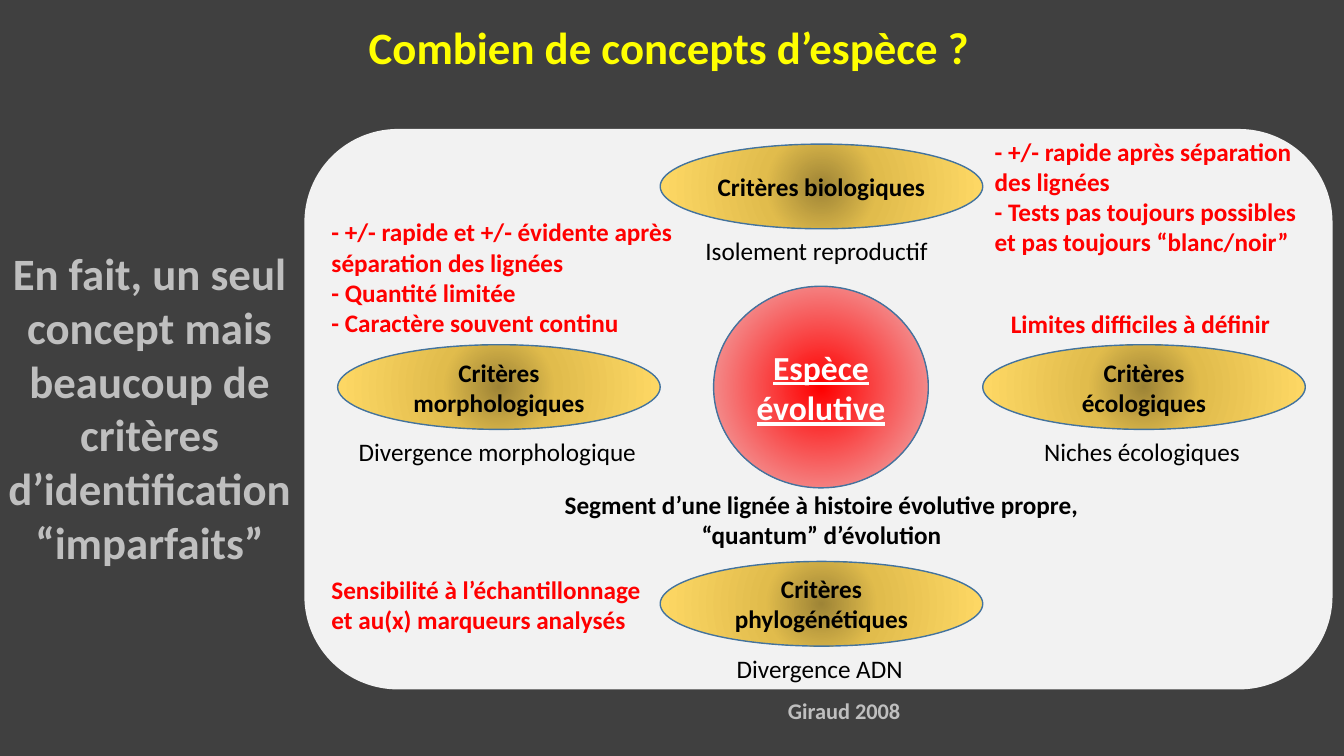
import pptx
import pptx.util
import pptx.dml.color
import pptx.enum.shapes
import pptx.enum.text
import pptx.oxml
import pptx.oxml.ns

Pt = pptx.util.Pt
RGB = pptx.dml.color.RGBColor
SHAPES = pptx.enum.shapes.MSO_SHAPE
ALIGN = pptx.enum.text.PP_ALIGN
FIT = pptx.enum.text.MSO_AUTO_SIZE
MIDDLE = pptx.enum.text.MSO_ANCHOR.MIDDLE

DARK = RGB(0x40, 0x40, 0x40)
PALE = RGB(0xF2, 0xF2, 0xF2)
GREY = RGB(0xBF, 0xBF, 0xBF)
YELLOW = RGB(0xFF, 0xFF, 0x00)
RED = RGB(0xFF, 0x00, 0x00)
BLACK = RGB(0x00, 0x00, 0x00)
WHITE = RGB(0xFF, 0xFF, 0xFF)
BLUE = RGB(0x43, 0x73, 0x9E)
GOLD_STOPS = [(0, RGB(0x9E, 0x84, 0x36)), (34, RGB(0xE1, 0xBC, 0x4C)),
              (100, RGB(0xFF, 0xD9, 0x66))]
RED_STOPS = [(0, RED), (100, RGB(0xEF, 0xBC, 0xBC)), (100, RGB(0xF7, 0xDE, 0xDE))]


def write(frame, lines, size, color, bold=False, align=ALIGN.LEFT):
    """Fill a text frame with one paragraph per line."""
    frame.text = "\n".join(lines)
    for para in frame.paragraphs:
        para.alignment = align
        for run in para.runs:
            font = run.font
            font.name, font.size, font.bold = "Calibri", Pt(size), bold
            font.color.rgb = color


def add_label(slide, box, lines, size, color, bold=False, align=ALIGN.LEFT, wrap=True):
    """Add a text box at a box given in points."""
    frame = slide.shapes.add_textbox(*map(Pt, box)).text_frame
    frame.word_wrap = wrap
    frame.auto_size = FIT.SHAPE_TO_FIT_TEXT
    write(frame, lines, size, color, bold, align)
    return frame


def add_oval(slide, box, lines, stops, size, color):
    """Add an outlined ellipse with a radial gradient and centred text."""
    oval = slide.shapes.add_shape(SHAPES.OVAL, *map(Pt, box))
    oval.shadow.inherit = False
    oval.fill.background()
    marks = "".join(f'<a:gs pos="{pos * 1000}"><a:srgbClr val="{tint}"/></a:gs>'
                    for pos, tint in stops)
    grad = pptx.oxml.parse_xml(
        f'<a:gradFill {pptx.oxml.ns.nsdecls("a")} rotWithShape="1">'
        f'<a:gsLst>{marks}</a:gsLst><a:path path="circle">'
        '<a:fillToRect l="50000" t="50000" r="50000" b="50000"/>'
        '</a:path></a:gradFill>')
    blank = oval.element.spPr.find(pptx.oxml.ns.qn("a:noFill"))
    oval.element.spPr.replace(blank, grad)
    oval.line.color.rgb = BLUE
    oval.line.width = Pt(1)
    oval.text_frame.word_wrap = True
    oval.text_frame.vertical_anchor = MIDDLE
    write(oval.text_frame, lines, size, color, True, ALIGN.CENTER)
    return oval


def add_panel(slide, box):
    """Draw the pale rounded panel."""
    panel = slide.shapes.add_shape(SHAPES.ROUNDED_RECTANGLE, *map(Pt, box))
    panel.shadow.inherit = False
    panel.fill.solid()
    panel.fill.fore_color.rgb = PALE
    panel.line.fill.background()


def add_tests(slide, box):
    """Place the four criteria around the panel with their captions."""
    left, top = box[:2]
    wide, high = 230.4, 60.48
    tests = [
        (1, 10.8, ["Critères biologiques"], "Isolement reproductif", 279.36, 180),
        (0, 154.08, ["Critères morphologiques"], "Divergence morphologique", 31.68, 215.28),
        (2, 154.08, ["Critères écologiques"], "Niches écologiques", 521.28, 155.52),
        (1, 308.88, ["Critères", "phylogénétiques"], "Divergence ADN", 301.68, 134.64),
    ]
    for col, y, lines, note, x, width in tests:
        add_oval(slide, (left + 23.76 + col * wide, top + y, wide, high),
                 lines, GOLD_STOPS, 18, BLACK)
        add_label(slide, (left + x, top + y + high + 1.4, width, 28.8), [note], 18, BLACK)


def add_core(slide, box):
    """Place the central concept and its meaning."""
    left, top = box[:2]
    core = add_oval(slide, (left + 292.32, top + 112.32, 153.36, 144),
                    ["Espèce évolutive"], RED_STOPS, 24, WHITE)
    core.text_frame.paragraphs[0].runs[0].font.underline = True
    add_label(slide, (left + 177.84, top + 253.44, 383.04, 51.12),
              ["Segment d’une lignée à histoire évolutive propre, “quantum” d’évolution"],
              18, BLACK, True, ALIGN.CENTER)


def add_limits(slide, box):
    """Place the red remarks on the limits of each criterion."""
    left, top = box[:2]
    limits = [
        (486, 1.44, 235.44, 94.32,
         ["- +/- rapide après séparation des lignées",
          "- Tests pas toujours possibles et pas toujours “blanc/noir”"]),
        (12.24, 59.04, 279.36, 94.32,
         ["- +/- rapide et +/- évidente après séparation des lignées",
          "- Quantité limitée", "- Caractère souvent continu"]),
        (497.52, 124.56, 202.32, 28.8, ["Limites difficiles à définir"]),
        (12.24, 314.64, 242.64, 51.12,
         ["Sensibilité à l’échantillonnage et au(x) marqueurs analysés"]),
    ]
    for x, y, width, height, lines in limits:
        add_label(slide, (left + x, top + y, width, height), lines, 18, RED, True,
                  wrap=height > 30)


def add_frame(slide, box):
    """Place the title, the side message and the source."""
    left, top = box[:2]
    add_label(slide, (left + 256.32, top + 10.8, 447.12, 46.08),
              ["Combien de concepts d’espèce ?"], 32, YELLOW, True, wrap=False)
    add_label(slide, (left - 2.16, top + 172.08, 218.16, 239.76),
              ["En fait, un seul concept mais beaucoup de critères "
               "d’identification “imparfaits”"], 32, GREY, True, ALIGN.CENTER)
    source = add_label(slide, (left + 465.84, top + 494.64, 238.32, 26.64),
                       ["Giraud 2008"], 16, GREY, True, ALIGN.CENTER)
    source.paragraphs[0].level = 1


def main():
    """Build and save the slide."""
    deck = pptx.Presentation()
    deck.slide_width, deck.slide_height = Pt(960), Pt(540)
    slide = deck.slides.add_slide(deck.slide_layouts[6])
    slide.background.fill.solid()
    slide.background.fill.fore_color.rgb = DARK
    panel = (217.44, 92.16, 734.4, 400.32)
    add_panel(slide, panel)
    add_frame(slide, (0, 0, 960, 540))
    add_tests(slide, panel)
    add_core(slide, panel)
    add_limits(slide, panel)
    deck.save("out.pptx")


if __name__ == "__main__":
    main()
